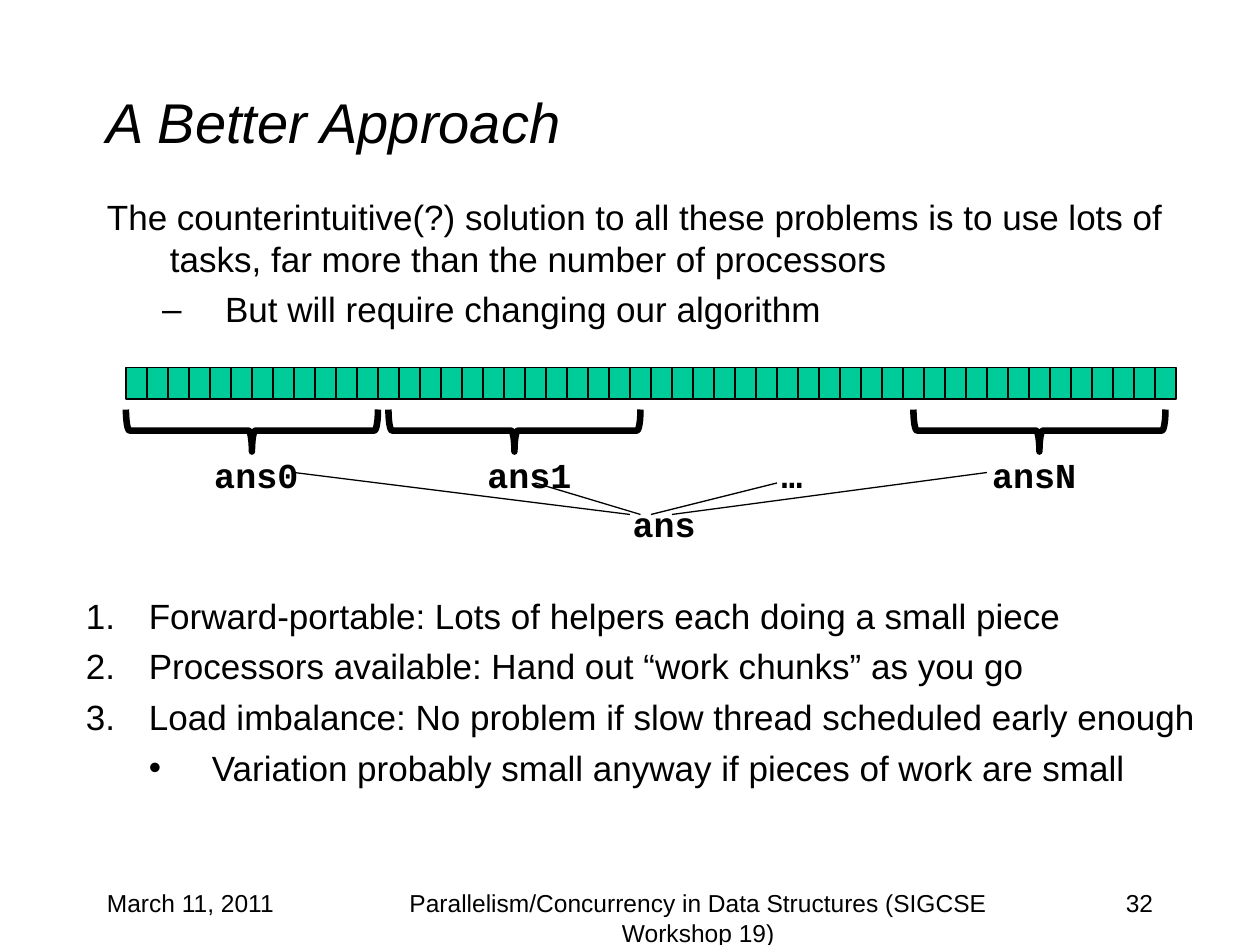
import pptx
import pptx.dml.color
import pptx.enum.shapes
import pptx.enum.text
import pptx.oxml.ns
import pptx.util
from lxml import etree

Pt = pptx.util.Pt
ALIGN = pptx.enum.text.PP_ALIGN
ANCHOR = pptx.enum.text.MSO_ANCHOR
SHAPE = pptx.enum.shapes.MSO_SHAPE
BLACK = pptx.dml.color.RGBColor(0x00, 0x00, 0x00)
GREEN = pptx.dml.color.RGBColor(0x00, 0xCC, 0x99)
qn = pptx.oxml.ns.qn

presentation = pptx.Presentation()
presentation.slide_width = Pt(720)
presentation.slide_height = Pt(540)
slide = presentation.slides.add_slide(presentation.slide_layouts[6])


def add_text(box, lines, size, font="Arial", align=ALIGN.LEFT, anchor=ANCHOR.TOP):
    """Add a wrapping text box with one paragraph per line."""
    frame = slide.shapes.add_textbox(*[Pt(length) for length in box]).text_frame
    frame.word_wrap = True
    frame.vertical_anchor = anchor
    for index, line in enumerate(lines):
        paragraph = frame.paragraphs[0] if index == 0 else frame.add_paragraph()
        paragraph.text = line
        paragraph.alignment = align
        paragraph.font.size = Pt(size)
        paragraph.font.name = font
        paragraph.font.color.rgb = BLACK
    return frame


def set_list_item(paragraph, margin, level=0, bullet=None, numbered=False):
    """Give a paragraph a 36 pt hanging indent and a bullet or number."""
    paragraph.level = level
    paragraph.space_before = Pt(5)
    properties = paragraph._p.get_or_add_pPr()
    properties.set("marL", str(Pt(margin)))
    properties.set("indent", str(Pt(-36)))
    if numbered:
        etree.SubElement(properties, qn("a:buFont"), typeface="+mj-lt")
        etree.SubElement(properties, qn("a:buAutoNum"), type="arabicPeriod")
    elif bullet:
        etree.SubElement(properties, qn("a:buFont"), typeface="Arial")
        etree.SubElement(properties, qn("a:buChar"), char=bullet)


# Title
title = add_text((54, 24, 612, 90), ["A Better Approach"], 32, anchor=ANCHOR.MIDDLE)
title.paragraphs[0].font.italic = True

# Introduction
introduction = add_text((54, 108, 630, 90), [
    "The counterintuitive(?) solution to all these problems is to use lots of "
    "tasks, far more than the number of processors",
    "But will require changing our algorithm",
], 20)
set_list_item(introduction.paragraphs[0], 36)
set_list_item(introduction.paragraphs[1], 67.5, level=1, bullet="–")

# Array of 50 cells
for index in range(50):
    cell = slide.shapes.add_shape(
        SHAPE.RECTANGLE, Pt(72 + 12 * index), Pt(210), Pt(12), Pt(18))
    cell.shadow.inherit = False
    cell.fill.solid()
    cell.fill.fore_color.rgb = GREEN
    cell.line.color.rgb = BLACK
    cell.line.width = Pt(0.75)

# Braces, each under 12 cells
for left in (132, 282, 582):
    brace = slide.shapes.add_shape(SHAPE.LEFT_BRACE, Pt(left), Pt(174), Pt(24), Pt(144))
    brace.rotation = 270
    brace.shadow.inherit = False
    brace.fill.background()
    brace.line.color.rgb = BLACK
    brace.line.width = Pt(3.75)

# Partial answers and the combined answer, placed by centre and top
for label, center, top in (("ans0", 146.5, 259), ("ans1", 302.5, 259), ("…", 452.5, 259),
                           ("ansN", 591, 259), ("ans", 379.5, 287)):
    frame = add_text((center - 36, top, 72, 24), [label], 20, "Courier New",
                     ALIGN.CENTER, ANCHOR.MIDDLE)
    frame.margin_top = frame.margin_bottom = 0
    frame.paragraphs[0].font.bold = True

# Lines from the partial answers to the combined answer
for start_x, start_y, end_x in ((168, 270, 360), (306, 276, 366),
                                (444, 276, 372), (564, 270, 384)):
    line = slide.shapes.add_connector(
        pptx.enum.shapes.MSO_CONNECTOR.STRAIGHT,
        Pt(start_x), Pt(start_y), Pt(end_x), Pt(294))
    line.line.color.rgb = BLACK
    line.line.width = Pt(0.75)
    etree.SubElement(line._element.spPr, qn("a:effectLst"))

# Numbered benefits
benefits = add_text((42, 336, 654, 144), [
    "Forward-portable: Lots of helpers each doing a small piece",
    "Processors available: Hand out “work chunks” as you go",
    "Load imbalance: No problem if slow thread scheduled early enough",
    "Variation probably small anyway if pieces of work are small",
], 20)
for paragraph in benefits.paragraphs[:3]:
    set_list_item(paragraph, 36, numbered=True)
set_list_item(benefits.paragraphs[3], 72, level=1, bullet="•")

# Footer
add_text((54, 504, 150, 36), ["March 11, 2011"], 14)
add_text((198, 504, 402, 36),
         ["Parallelism/Concurrency in Data Structures (SIGCSE Workshop 19)"],
         14, align=ALIGN.CENTER)
add_text((516, 504, 150, 36), ["32"], 14, align=ALIGN.RIGHT)

presentation.save("out.pptx")
